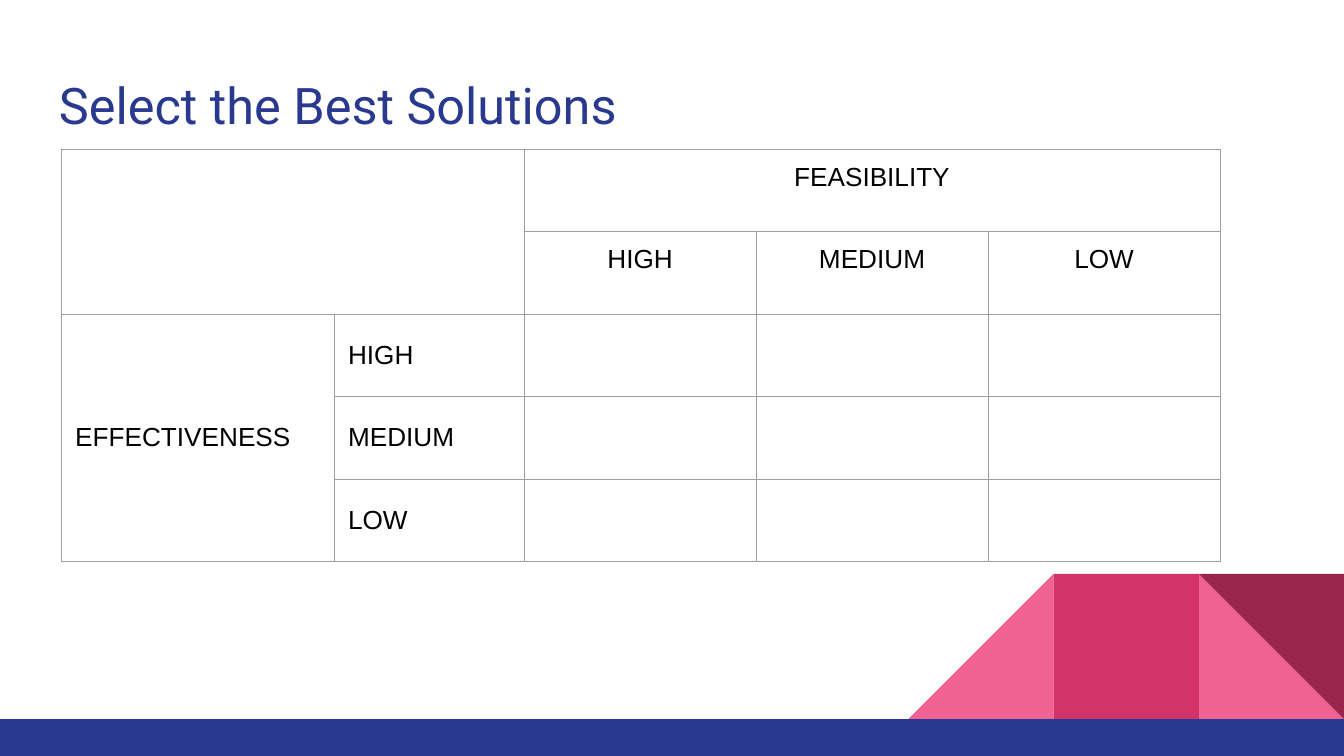
from typing import NamedTuple

from lxml.etree import SubElement
from pptx import Presentation
from pptx.dml.color import RGBColor
from pptx.enum.shapes import MSO_SHAPE
from pptx.enum.text import MSO_ANCHOR, PP_ALIGN
from pptx.oxml.ns import qn
from pptx.util import Inches, Pt

BLUE, PINK, ROSE, WINE = "2A3990", "F06292", "D23369", "9C254D"
GREY, BLACK = "9E9E9E", "000000"
LEVELS = ["HIGH", "MEDIUM", "LOW"]
PAD = Inches(0.1)


class Block(NamedTuple):
    kind: MSO_SHAPE
    left: float
    top: float
    width: float
    height: float
    color: str
    flip: bool = False
    rotation: int = 0


class Label(NamedTuple):
    row: int
    col: int
    text: str
    align: PP_ALIGN
    anchor: MSO_ANCHOR


def rgb(color: str) -> RGBColor:
    return RGBColor.from_string(color)


def add_run(p, text: str, font: str, size: float, color: str) -> None:
    r = p.add_run()
    r.text = text
    r.font.name, r.font.size = font, Pt(size)
    r.font.color.rgb = rgb(color)


def add_block(slide, b: Block) -> None:
    sp = slide.shapes.add_shape(
        b.kind, Inches(b.left), Inches(b.top), Inches(b.width), Inches(b.height))
    sp.shadow.inherit = False
    sp.fill.solid()
    sp.fill.fore_color.rgb = rgb(b.color)
    sp.line.fill.background()
    sp.rotation = b.rotation
    if b.flip:
        sp.element.spPr.find(qn("a:xfrm")).set("flipH", "1")


def style_cell(cell) -> None:
    tc_pr = cell._tc.get_or_add_tcPr()
    for side in ("lnL", "lnR", "lnT", "lnB"):
        ln = SubElement(tc_pr, qn(f"a:{side}"), w=str(Pt(0.75)))
        fill = SubElement(ln, qn("a:solidFill"))
        SubElement(fill, qn("a:srgbClr"), val=GREY)
    cell.fill.background()
    cell.margin_left = cell.margin_right = PAD
    cell.margin_top = cell.margin_bottom = PAD


def add_label(table, label: Label) -> None:
    cell = table.cell(label.row, label.col)
    cell.vertical_anchor = label.anchor
    p = cell.text_frame.paragraphs[0]
    p.alignment = label.align
    add_run(p, label.text, "Arial", 14, BLACK)


# Slide in 16:9
prs = Presentation()
prs.slide_width = Inches(10)
prs.slide_height = Inches(10) * 9 // 16
s = prs.slides.add_slide(prs.slide_layouts[6])

# Corner decoration: three squares ending at the right edge, above the bar
SIDE, TOP = 1.08, 4.27
LEFT, MIDDLE, RIGHT = (10 - n * SIDE for n in (3, 2, 1))
TRIANGLE, RECT = MSO_SHAPE.RIGHT_TRIANGLE, MSO_SHAPE.RECTANGLE
for block in (
    Block(TRIANGLE, RIGHT, TOP, SIDE, SIDE, PINK),
    Block(TRIANGLE, LEFT, TOP, SIDE, SIDE, PINK, flip=True),
    Block(RECT, MIDDLE, TOP, SIDE, SIDE, ROSE),
    Block(TRIANGLE, RIGHT, TOP, SIDE, SIDE, WINE, rotation=180),
    Block(RECT, 0, TOP + SIDE, 10, 0.28, BLUE),
):
    add_block(s, block)

# Title
tf = s.shapes.add_textbox(
    Inches(0.34), Inches(0.45), Inches(9.32), Inches(0.66)).text_frame
tf.word_wrap = True
tf.vertical_anchor = MSO_ANCHOR.MIDDLE
tf.margin_left = tf.margin_right = tf.margin_top = tf.margin_bottom = PAD
add_run(tf.paragraphs[0], "Select the Best Solutions", "Roboto", 27, BLUE)

# Decision matrix: two heading columns, the rest shared by the levels
WIDTH, HEADINGS = 8.62, [2.03, 1.41]
level_width = (WIDTH - sum(HEADINGS)) / len(LEVELS)
table = s.shapes.add_table(
    5, 5, Inches(0.46), Inches(1.11), Inches(WIDTH), Inches(3.07)).table
table.first_row = table.horz_banding = False
for column, width in zip(table.columns, HEADINGS + [level_width] * len(LEVELS)):
    column.width = Inches(width)
for cell in table.iter_cells():
    style_cell(cell)
for (top, left), (bottom, right) in (
    ((0, 0), (1, 1)), ((0, 2), (0, 4)), ((2, 0), (4, 0)),
):
    table.cell(top, left).merge(table.cell(bottom, right))

# Headings across the top and down the side
across = (PP_ALIGN.CENTER, MSO_ANCHOR.TOP)
down = (PP_ALIGN.LEFT, MSO_ANCHOR.MIDDLE)
add_label(table, Label(0, 2, "FEASIBILITY", *across))
add_label(table, Label(2, 0, "EFFECTIVENESS", *down))
for i, level in enumerate(LEVELS, start=2):
    add_label(table, Label(1, i, level, *across))
    add_label(table, Label(i, 1, level, *down))

prs.save("out.pptx")
